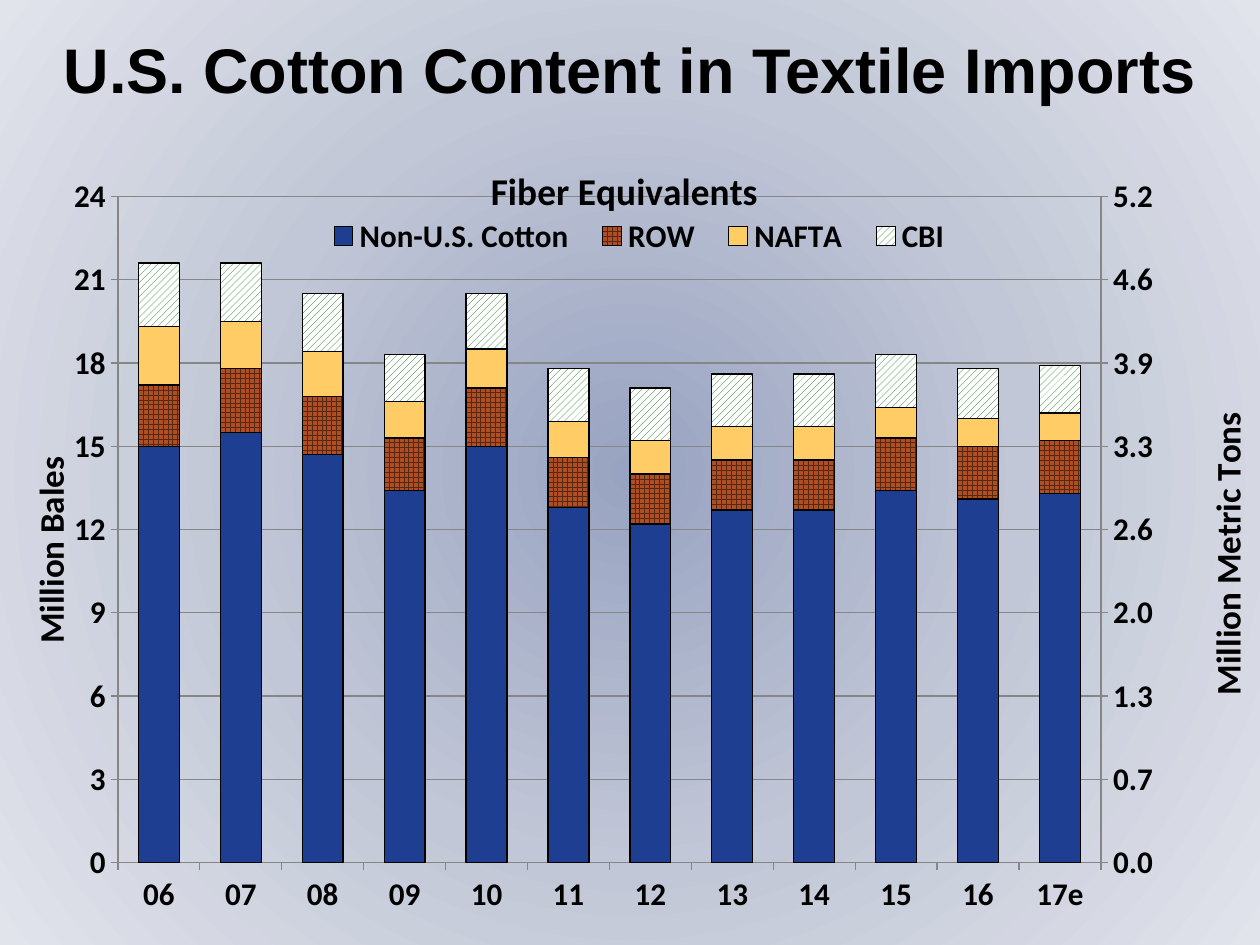
"""Build the slide on U.S. cotton content in textile imports."""
from copy import deepcopy

from lxml import etree
from pptx import Presentation
from pptx.chart.data import CategoryChartData
from pptx.dml.color import RGBColor
from pptx.enum.chart import XL_CHART_TYPE, XL_LEGEND_POSITION, XL_TICK_LABEL_POSITION, XL_TICK_MARK
from pptx.enum.dml import MSO_PATTERN
from pptx.enum.text import MSO_ANCHOR, PP_ALIGN
from pptx.oxml import parse_xml
from pptx.oxml.ns import nsdecls, qn
from pptx.util import Inches, Pt

STACKED = XL_CHART_TYPE.COLUMN_STACKED
TOP = XL_LEGEND_POSITION.TOP
LOW = XL_TICK_LABEL_POSITION.LOW
OUTSIDE, NO_TICK = XL_TICK_MARK.OUTSIDE, XL_TICK_MARK.NONE
GRID, DIAGONAL = MSO_PATTERN.LARGE_GRID, MSO_PATTERN.WIDE_UPWARD_DIAGONAL
MIDDLE, CENTER = MSO_ANCHOR.MIDDLE, PP_ALIGN.CENTER
BALES_PER_TON = 4.59


def color(hex_string):
    return RGBColor.from_string(hex_string)


def set_layout(parent, index, **values):
    for old in parent.findall(qn("c:layout")):
        parent.remove(old)
    layout = etree.Element(qn("c:layout"))
    manual = etree.SubElement(layout, qn("c:manualLayout"))
    for name, value in values.items():
        etree.SubElement(manual, qn("c:" + name)).set("val", str(value))
    parent.insert(index, layout)


prs = Presentation()
prs.slide_width, prs.slide_height = Inches(10), Inches(7.5)
s = prs.slides.add_slide(prs.slide_layouts[6])

s.background.fill.gradient()
grad = next(s.element.iter(qn("a:gradFill")))
stops = "".join(
    f'<a:gs pos="{pos * 1000}"><a:srgbClr val="{c}"/></a:gs>'
    for pos, c in [(0, "98A3C1"), (50, "C2C7D7"), (100, "E1E4EB")])
grad.getparent().replace(grad, parse_xml(
    f'<a:gradFill {nsdecls("a")} rotWithShape="1"><a:gsLst>{stops}</a:gsLst><a:path path="circle">'
    '<a:fillToRect l="50000" t="50000" r="50000" b="50000"/></a:path></a:gradFill>'))

tf = s.shapes.add_textbox(0, Inches(0.17), Inches(10), Inches(0.75)).text_frame
tf.word_wrap = True
tf.vertical_anchor = MIDDLE
p = tf.paragraphs[0]
p.text = "U.S. Cotton Content in Textile Imports"
p.alignment = CENTER
p.font.size, p.font.bold, p.font.name = Pt(36), True, "Arial"
p.font.color.rgb = color("000000")

series = [
    ("Non-U.S. Cotton", [15, 15.5, 14.7, 13.4, 15, 12.8, 12.2, 12.7, 12.7, 13.4, 13.1, 13.3]),
    ("ROW", [2.2, 2.3, 2.1, 1.9, 2.1, 1.8, 1.8, 1.8, 1.8, 1.9, 1.9, 1.9]),
    ("NAFTA", [2.1, 1.7, 1.6, 1.3, 1.4, 1.3, 1.2, 1.2, 1.2, 1.1, 1, 1]),
    ("CBI", [2.3, 2.1, 2.1, 1.7, 2, 1.9, 1.9, 1.9, 1.9, 1.9, 1.8, 1.7]),
    ("Series 5", [0.7, 0.7, 0.7, 0.6, 0.7, 0.6, 0.6, 0.6, 0.6, 0.6, 0.6, 0.6]),
    ("Series 6", [3.3, 3.4, 3.2, 2.9, 3.3, 2.8, 2.7, 2.8, 2.8, 2.9, 2.9, 2.9]),
    ("Series 7", [0.5, 0.5, 0.5, 0.4, 0.5, 0.4, 0.4, 0.4, 0.4, 0.4, 0.4, 0.4]),
    ("Series 8", [0.5, 0.4, 0.3, 0.3, 0.3, 0.3, 0.3, 0.3, 0.3, 0.2, 0.2, 0.2]),
]
fills = [(None, "1E3E92", None), (GRID, "572711", "AE4E22"),
         (None, "FFCC66", None), (DIAGONAL, "006600", "FFFFFF")]

data = CategoryChartData()
data.categories = [f"{year:02d}" for year in range(6, 17)] + ["17e"]
for name, values in series:
    data.add_series(name, values)
chart = s.shapes.add_chart(STACKED, 0, Inches(0.92), Inches(10), Inches(6.58), data).chart
chart.font.size, chart.font.bold, chart.font.name = Pt(18), True, "Calibri"
chart.font.color.rgb = color("000000")

plot = chart.plots[0]
plot.gap_width, plot.overlap, plot.vary_by_categories = 100, 100, False
for ser in plot.series:
    ser.format.fill.background()
    ser.format.line.fill.background()
for ser, (pattern, fore, back) in zip(plot.series, fills):
    fill = ser.format.fill
    if pattern:
        fill.patterned()
        fill.pattern = pattern
        fill.back_color.rgb = color(back)
    else:
        fill.solid()
    fill.fore_color.rgb = color(fore)
    ser.format.line.color.rgb = color("000000")
    ser.format.line.width = Pt(0.75)

cat, val = chart.category_axis, chart.value_axis
for axis in (cat, val):
    axis.major_tick_mark, axis.minor_tick_mark = OUTSIDE, NO_TICK
    axis.format.line.color.rgb = color("868686")
    axis.format.line.width = Pt(0.75)
cat.tick_label_position = LOW
val.minimum_scale, val.maximum_scale, val.major_unit = 0, 24, 3
val.tick_labels.number_format = "0"
val.tick_labels.number_format_is_linked = False
val.has_major_gridlines = True
val.major_gridlines.format.line.color.rgb = color("868686")
val.major_gridlines.format.line.width = Pt(0.75)

for tf, text, size in [(chart.chart_title.text_frame, "Fiber Equivalents", 21.6),
                       (val.axis_title.text_frame, "Million Bales", 20)]:
    tf.text = text
    f = tf.paragraphs[0].runs[0].font
    f.size, f.bold, f.name = Pt(size), True, "Calibri"
    f.color.rgb = color("000000")

chart.has_legend = True
chart.legend.position = TOP
chart.legend.include_in_layout = True

area = next(chart.element.iter(qn("c:plotArea")))
left_bars = area.find(qn("c:barChart"))
left_cat, left_val = area.find(qn("c:catAx")), area.find(qn("c:valAx"))
body = next(left_val.find(qn("c:title")).iter(qn("a:bodyPr")))
body.set("rot", "-5400000")
body.set("vert", "horz")

right_bars, right_cat, right_val = map(deepcopy, (left_bars, left_cat, left_val))
left_bars.addnext(right_bars)
left_val.addnext(right_val)
right_val.addnext(right_cat)
for bars, unused in [(left_bars, slice(5, 8)), (right_bars, slice(0, 5))]:
    for ser in bars.findall(qn("c:ser"))[unused]:
        bars.remove(ser)

cat_id, val_id = "5001", "5002"
for node, value in zip(right_bars.findall(qn("c:axId")), (cat_id, val_id)):
    node.set("val", value)
for axis, own, other in [(right_cat, cat_id, val_id), (right_val, val_id, cat_id)]:
    axis.find(qn("c:axId")).set("val", own)
    axis.find(qn("c:crossAx")).set("val", other)
right_cat.find(qn("c:delete")).set("val", "1")
right_val.remove(right_val.find(qn("c:majorGridlines")))
right_val.find(qn("c:axPos")).set("val", "r")
right_val.find(qn("c:crosses")).set("val", "max")
right_val.find(qn("c:numFmt")).set("formatCode", "#,##0.0")
right_val.find(qn("c:majorUnit")).set("val", str(3 / BALES_PER_TON))
right_val.find(qn("c:scaling")).find(qn("c:max")).set("val", str(24 / BALES_PER_TON))
next(right_val.iter(qn("a:t"))).text = "Million Metric Tons"

legend = next(chart.element.iter(qn("c:legend")))
for i in range(4, 8):
    entry = etree.Element(qn("c:legendEntry"))
    etree.SubElement(entry, qn("c:idx")).set("val", str(i))
    etree.SubElement(entry, qn("c:delete")).set("val", "1")
    legend.insert(i - 3, entry)

edge = {"xMode": "edge", "yMode": "edge"}
set_layout(area, 0, layoutTarget="inner", **edge, x=0.095, y=0.097, w=0.792, h=0.804)
set_layout(legend, 5, **edge, x=0.25, y=0.12, w=0.53, h=0.05)
chart_title = chart.element.find(qn("c:chart")).find(qn("c:title"))
for title, x, y in [(chart_title, 0.39, 0.05),
                    (left_val.find(qn("c:title")), 0.016, 0.4),
                    (right_val.find(qn("c:title")), 0.964, 0.345)]:
    set_layout(title, 1, **edge, x=x, y=y)

prs.save("out.pptx")
